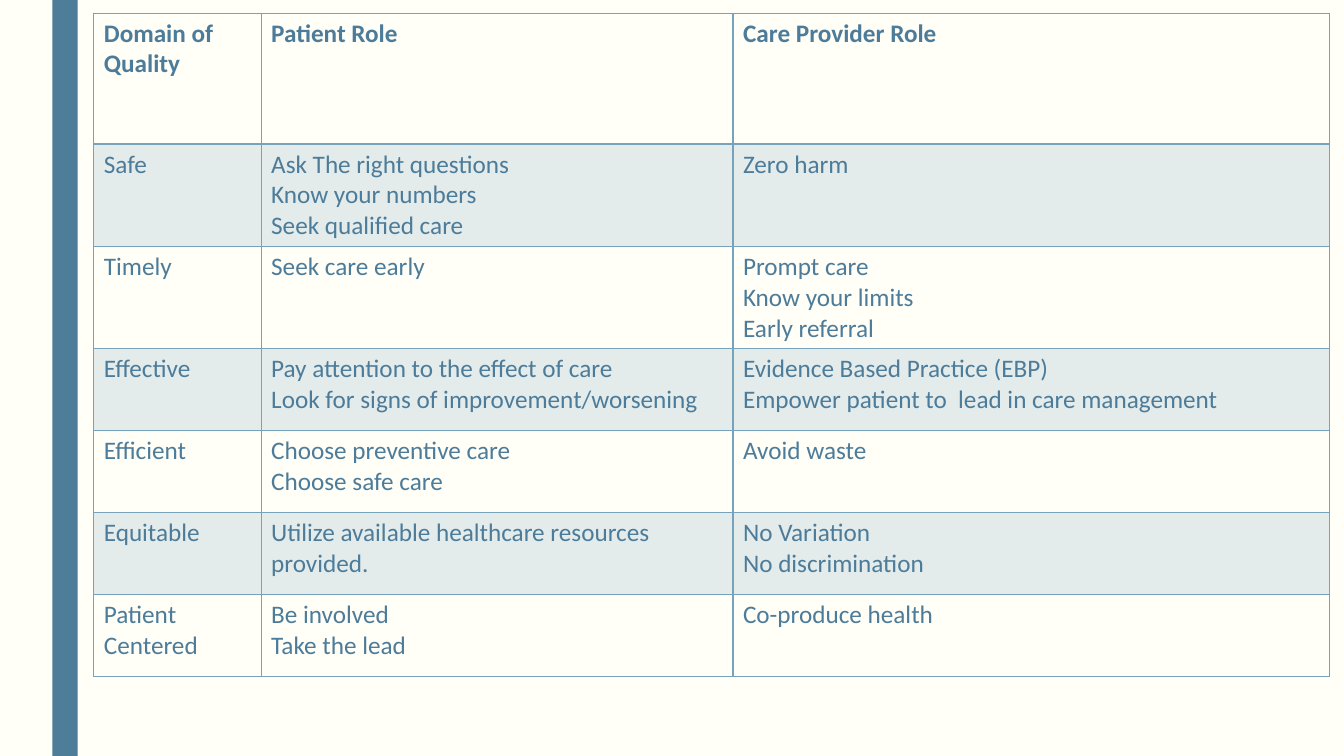
"""Build a slide that compares patient and care provider roles by domain of quality."""

from typing import NamedTuple

from lxml.etree import SubElement
from pptx import Presentation
from pptx.dml.color import RGBColor
from pptx.enum.shapes import MSO_SHAPE
from pptx.oxml.ns import qn
from pptx.slide import Slide
from pptx.table import Table, _Cell
from pptx.util import Inches, Pt

SLIDE_WIDTH = Inches(13.33)
SLIDE_HEIGHT = Inches(7.5)
FONT_NAME = "Calibri"
FONT_SIZE = Pt(18)
COLORS = {
    "background": "FFFEF7",
    "bar": "4D7D99",
    "text": "4C7C99",
    "accent": "77A2BB",
}
BAND_OPACITY = 20
THIN_BORDER = 1
HEADER_BORDER = 2
TABLE_LEFT = 6.98
TABLE_TOP = 1.73
COLUMN_WIDTHS = (12.45, 35.11, 44.41)


class DomainRow(NamedTuple):
    """One table row, its height given as a percentage of the slide."""

    domain: str
    patient_role: str
    provider_role: str
    height: float


ROWS = (
    DomainRow("Domain of Quality", "Patient Role", "Care Provider Role", 17.33),
    DomainRow(
        "Safe",
        "Ask The right questions\nKnow your numbers\nSeek qualified care",
        "Zero harm",
        13.33,
    ),
    DomainRow(
        "Timely",
        "Seek care early",
        "Prompt care\nKnow your limits\nEarly referral",
        13.33,
    ),
    DomainRow(
        "Effective",
        "Pay attention to the effect of care\nLook for signs of improvement/worsening",
        "Evidence Based Practice (EBP)\nEmpower patient to  lead in care management",
        10.85,
    ),
    DomainRow("Efficient", "Choose preventive care\nChoose safe care", "Avoid waste", 10.85),
    DomainRow(
        "Equitable",
        "Utilize available healthcare resources provided.",
        "No Variation\nNo discrimination",
        10.85,
    ),
    DomainRow("Patient Centered", "Be involved\nTake the lead", "Co-produce health", 10.85),
)


def across(percent: float) -> int:
    """Return a percentage of the slide width."""
    return round(SLIDE_WIDTH * percent / 100)


def down(percent: float) -> int:
    """Return a percentage of the slide height."""
    return round(SLIDE_HEIGHT * percent / 100)


def color(name: str) -> RGBColor:
    """Return a named palette color."""
    return RGBColor.from_string(COLORS[name])


def draw_side_bar(slide: Slide) -> None:
    """Draw the vertical bar left of the table."""
    bar = slide.shapes.add_shape(
        MSO_SHAPE.RECTANGLE, across(3.9), 0, across(1.88), SLIDE_HEIGHT
    )
    bar.shadow.inherit = False
    bar.fill.solid()
    bar.fill.fore_color.rgb = color("bar")
    bar.line.fill.background()


def set_borders(cell: _Cell, row_index: int) -> None:
    """Outline a cell, with a heavier line under the header."""
    widths = {
        "a:lnL": THIN_BORDER,
        "a:lnR": THIN_BORDER,
        "a:lnT": HEADER_BORDER if row_index == 1 else THIN_BORDER,
        "a:lnB": HEADER_BORDER if row_index == 0 else THIN_BORDER,
    }
    properties = cell._tc.get_or_add_tcPr()
    for tag, width in widths.items():
        border = SubElement(properties, qn(tag), w=str(Pt(width)))
        fill = SubElement(border, qn("a:solidFill"))
        SubElement(fill, qn("a:srgbClr"), val=COLORS["accent"])


def set_fill(cell: _Cell, row_index: int) -> None:
    """Tint every second row and leave the others clear."""
    if row_index % 2 == 0:
        cell.fill.background()
        return
    cell.fill.solid()
    cell.fill.fore_color.rgb = color("accent")
    tint = cell._tc.tcPr.find(qn("a:solidFill")).find(qn("a:srgbClr"))
    SubElement(tint, qn("a:alpha"), val=str(BAND_OPACITY * 1000))


def write_cell(cell: _Cell, text: str, bold: bool) -> None:
    """Write and format the text of a cell."""
    cell.text_frame.text = text
    for paragraph in cell.text_frame.paragraphs:
        for run in paragraph.runs:
            run.font.name = FONT_NAME
            run.font.size = FONT_SIZE
            run.font.bold = bold
            run.font.color.rgb = color("text")


def fill_table(table: Table) -> None:
    """Size the grid and fill all its cells."""
    table.horz_banding = False
    for column, width in zip(table.columns, COLUMN_WIDTHS):
        column.width = across(width)
    for row_index, domain_row in enumerate(ROWS):
        table.rows[row_index].height = down(domain_row.height)
        texts = (domain_row.domain, domain_row.patient_role, domain_row.provider_role)
        for cell, text in zip(table.rows[row_index].cells, texts):
            write_cell(cell, text, bold=row_index == 0)
            set_borders(cell, row_index)
            set_fill(cell, row_index)


def main() -> None:
    """Build and save the presentation."""
    presentation = Presentation()
    presentation.slide_width = SLIDE_WIDTH
    presentation.slide_height = SLIDE_HEIGHT
    slide = presentation.slides.add_slide(presentation.slide_layouts[6])
    slide.background.fill.solid()
    slide.background.fill.fore_color.rgb = color("background")
    draw_side_bar(slide)
    table_frame = slide.shapes.add_table(
        len(ROWS),
        len(COLUMN_WIDTHS),
        across(TABLE_LEFT),
        down(TABLE_TOP),
        across(sum(COLUMN_WIDTHS)),
        down(sum(row.height for row in ROWS)),
    )
    fill_table(table_frame.table)
    presentation.save("out.pptx")


if __name__ == "__main__":
    main()
